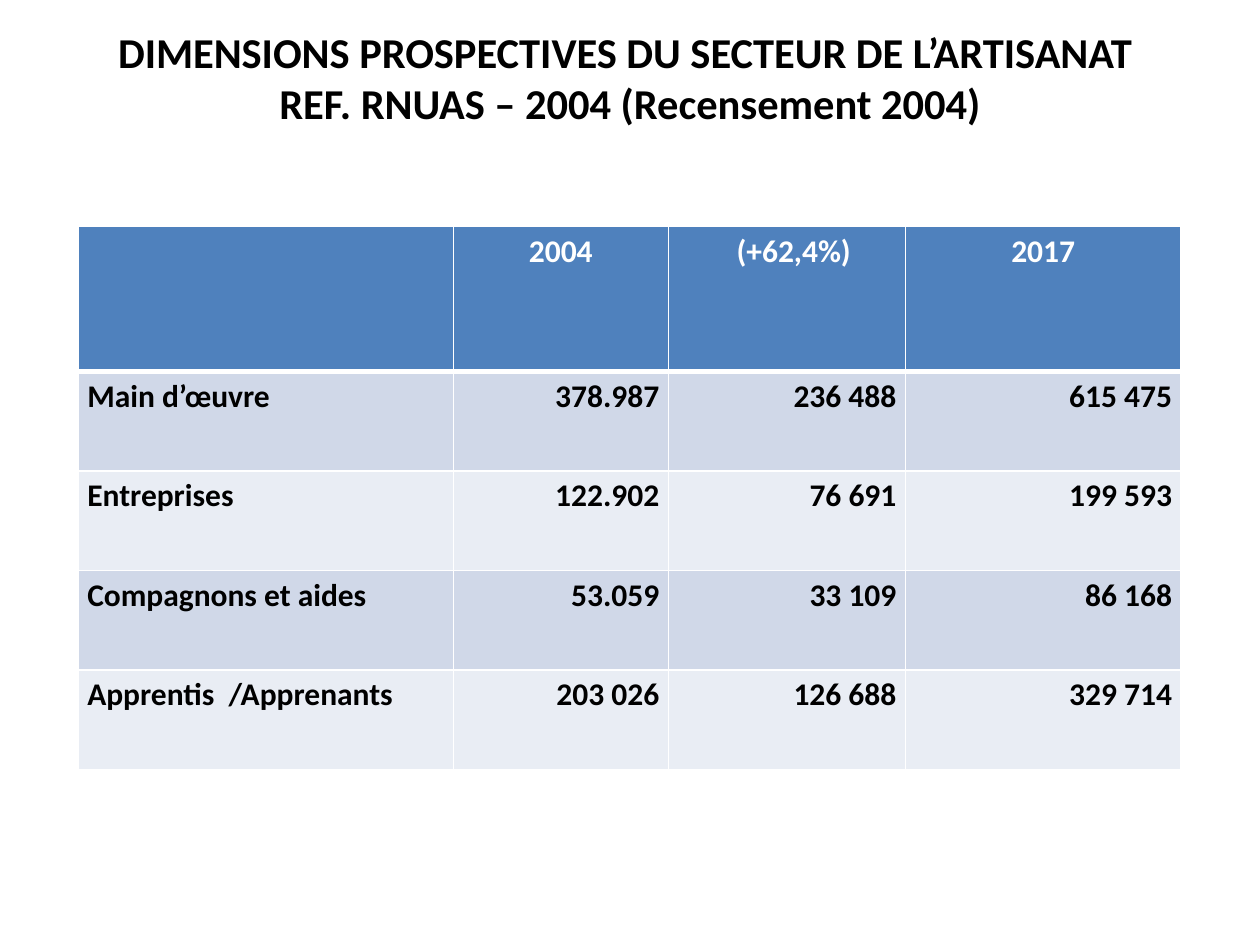
import lxml.etree
import pptx
import pptx.dml.color
import pptx.enum.text
import pptx.oxml.ns
import pptx.util

Cm = pptx.util.Cm
Align = pptx.enum.text.PP_ALIGN
Anchor = pptx.enum.text.MSO_ANCHOR

COLORS = {
    "text": "000000",
    "white": "FFFFFF",
    "header": "4F81BD",
    "band_dark": "D0D8E8",
    "band_light": "E9EDF4",
}
TITLE_LINES = [
    "DIMENSIONS PROSPECTIVES DU SECTEUR DE L’ARTISANAT ",
    "REF. RNUAS – 2004 (Recensement 2004)",
]
ROWS = [
    ["", "2004", "(+62,4%)", "2017"],
    ["Main d’œuvre", "378.987", "236 488", "615 475"],
    ["Entreprises", "122.902", "76 691", "199 593"],
    ["Compagnons et aides", "53.059", "33 109", "86 168"],
    ["Apprentis  /Apprenants", "203 026", "126 688", "329 714"],
]
COLUMN_SHARES = [0.34, 0.195, 0.215, 0.25]
HEADER_HEIGHT = 2.92


def rgb(name):
    return pptx.dml.color.RGBColor.from_string(COLORS[name])


def write_text(text_frame, lines, size=18, color="text", align=Align.LEFT, spacing=1.0):
    paragraph = text_frame.paragraphs[0]
    for index, line in enumerate(lines):
        if index:
            paragraph.add_line_break()
        paragraph.add_run().text = line
    paragraph.alignment = align
    paragraph.line_spacing = spacing
    paragraph.space_before = pptx.util.Pt(0)
    for run in paragraph.runs:
        run.font.name = "Calibri"
        run.font.size = pptx.util.Pt(size)
        run.font.bold = True
        run.font.color.rgb = rgb(color)


def set_borders(cell, widths):
    properties = cell._tc.get_or_add_tcPr()
    for side, width in zip("LRTB", widths):
        line = lxml.etree.SubElement(
            properties, pptx.oxml.ns.qn(f"a:ln{side}"), w=str(pptx.util.Pt(width))
        )
        fill = lxml.etree.SubElement(line, pptx.oxml.ns.qn("a:solidFill"))
        lxml.etree.SubElement(fill, pptx.oxml.ns.qn("a:srgbClr"), val=COLORS["white"])


def place_title(slide, left, top, width, height):
    title = slide.shapes.title
    title.left, title.top, title.width, title.height = map(Cm, (left, top, width, height))
    frame = title.text_frame
    frame.word_wrap = True
    frame.auto_size = pptx.enum.text.MSO_AUTO_SIZE.NONE
    frame.vertical_anchor = Anchor.TOP
    frame.margin_top = frame.margin_bottom = 0
    write_text(frame, TITLE_LINES, size=24.3, align=Align.CENTER)


def format_cell(cell, text, row, column):
    header = row == 0
    set_borders(cell, (1, 1, 3 if row == 1 else 1, 3 if header else 1))
    cell.fill.solid()
    band = "band_dark" if row % 2 else "band_light"
    cell.fill.fore_color.rgb = rgb("header" if header else band)
    cell.margin_left = Cm(0.46 if header and column == 2 else 0.18)
    cell.margin_right = Cm(0.18)
    cell.margin_top = cell.margin_bottom = 0
    cell.vertical_anchor = Anchor.TOP
    body_align = Align.RIGHT if column else Align.LEFT
    write_text(
        cell.text_frame,
        [text] if text else [],
        color="white" if header else "text",
        align=Align.CENTER if header else body_align,
        spacing=1.15,
    )


def place_table(slide, left, top, width, height):
    frame = slide.shapes.add_table(
        len(ROWS), len(COLUMN_SHARES), Cm(left), Cm(top), Cm(width), Cm(height)
    )
    table = frame.table
    for column, share in zip(table.columns, COLUMN_SHARES):
        column.width = Cm(width * share)
    body_height = (height - HEADER_HEIGHT) / (len(ROWS) - 1)
    for row, values in enumerate(ROWS):
        table.rows[row].height = Cm(body_height if row else HEADER_HEIGHT)
        for column, text in enumerate(values):
            format_cell(table.cell(row, column), text, row, column)


def main():
    presentation = pptx.Presentation()
    presentation.slide_width = Cm(25.4)
    presentation.slide_height = Cm(19.05)
    slide = presentation.slides.add_slide(presentation.slide_layouts[5])
    place_title(slide, 1.27, 0.53, 22.86, 3.18)
    place_table(slide, 1.58, 4.57, 22.23, 10.95)
    presentation.save("out.pptx")


if __name__ == "__main__":
    main()
